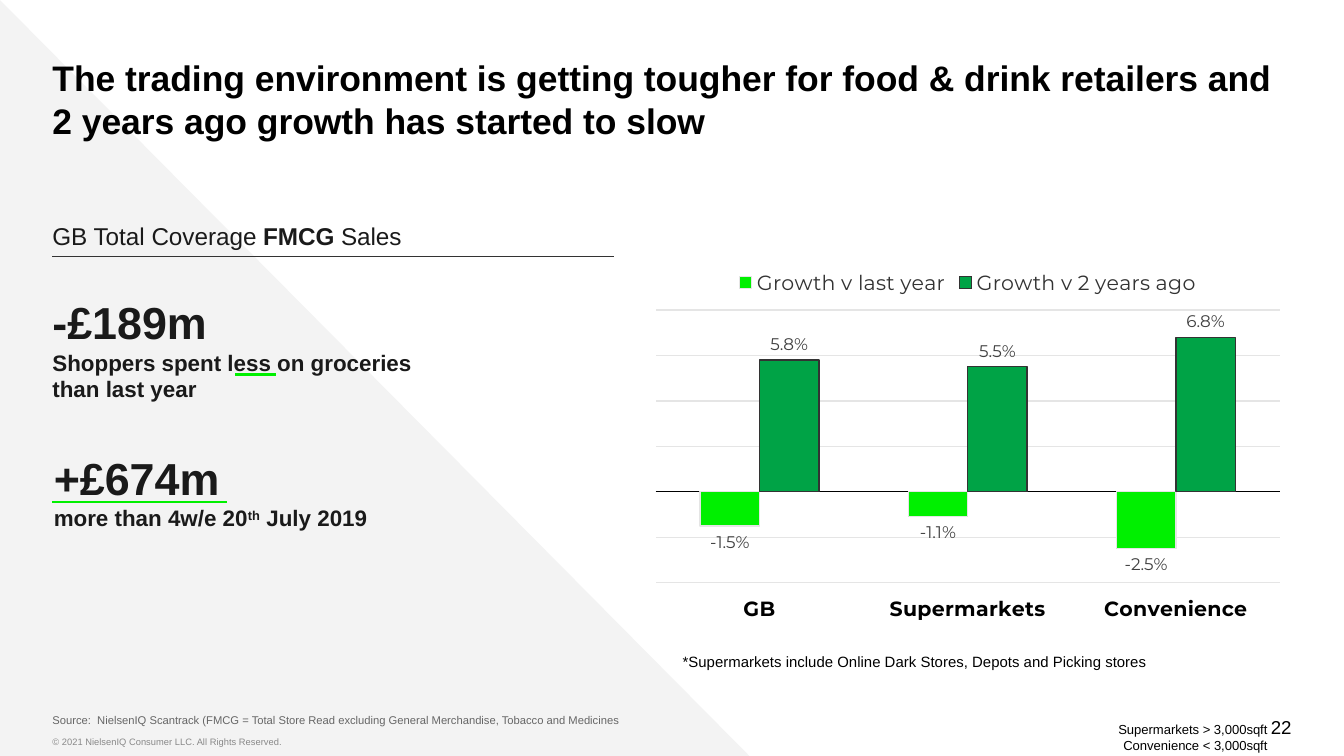
import pptx
import pptx.chart.data
import pptx.dml.color
import pptx.enum.chart
import pptx.enum.shapes
import pptx.enum.text
import pptx.oxml
import pptx.oxml.ns
import pptx.util

Pt = pptx.util.Pt
RGB = pptx.dml.color.RGBColor
ALIGN = pptx.enum.text.PP_ALIGN
ANCHOR = pptx.enum.text.MSO_ANCHOR

BLACK = RGB(0x00, 0x00, 0x00)
INK = RGB(0x1A, 0x1A, 0x1A)
CHARCOAL = RGB(0x33, 0x33, 0x33)
LABEL_GREY = RGB(0x40, 0x40, 0x40)
SOURCE_GREY = RGB(0x66, 0x66, 0x66)
COPYRIGHT_GREY = RGB(0x88, 0x88, 0x88)
GRID_GREY = RGB(0xE5, 0xE5, 0xE5)
PALE_GREY = RGB(0xF3, 0xF3, 0xF3)
LIME = RGB(0x00, 0xF0, 0x00)
GREEN = RGB(0x00, 0xA3, 0x46)


def style_font(font, size, color, bold=False, name="Arial"):
    font.name, font.size, font.bold = name, Pt(size), bold
    font.color.rgb = color


def write(shape, at, insets, paragraphs, color, align=ALIGN.LEFT, anchor=ANCHOR.TOP):
    """Place a shape and fill it; a run is (text, size, bold), None is a line break."""
    shape.left, shape.top, shape.width, shape.height = map(Pt, at)
    frame = shape.text_frame
    frame.word_wrap = True
    frame.auto_size = pptx.enum.text.MSO_AUTO_SIZE.NONE
    frame.vertical_anchor = anchor
    frame.margin_left, frame.margin_top, frame.margin_right, frame.margin_bottom = map(Pt, insets)
    for index, runs in enumerate(paragraphs):
        paragraph = frame.add_paragraph() if index else frame.paragraphs[0]
        paragraph.alignment = align
        paragraph.space_before = Pt(0)
        for piece in runs:
            if piece is None:
                paragraph.add_line_break()
                continue
            run = paragraph.add_run()
            run.text = piece[0]
            style_font(run.font, piece[1], color, piece[2])
    return frame


deck = pptx.Presentation()
deck.slide_width, deck.slide_height = Pt(720), Pt(405)
slide = deck.slides.add_slide(deck.slide_layouts[0])
shapes = slide.shapes

# Background triangle, behind the placeholders
triangle = shapes.add_shape(
    pptx.enum.shapes.MSO_SHAPE.RIGHT_TRIANGLE, 0, 0, Pt(402.5), Pt(406))
triangle.shadow.inherit = False
triangle.fill.solid()
triangle.fill.fore_color.rgb = PALE_GREY
triangle.line.fill.background()
shapes.element.insert(2, triangle.element)

# Title and source
write(shapes.title, (28.1, 23, 663.8, 31), (0, 7.2, 0, 7.2),
      [[("The trading environment is getting tougher for food & drink retailers and "
         "2 years ago growth has started to slow", 19, True)]], BLACK)
write(slide.placeholders[1], (28.1, 382.3, 642.2, 14.4), (0, 7.2, 0, 7.2),
      [[("Source:  NielsenIQ Scantrack (FMCG = Total Store Read excluding General "
         "Merchandise, Tobacco and Medicines", 6, False)]],
      SOURCE_GREY, anchor=ANCHOR.BOTTOM)

# Headline figures, notes and footer
FLUSH = (0, 3.6, 0, 3.6)
PADDED = (7.2, 3.6, 7.2, 3.6)
copyright_line, page_number, heading, decline, increase, coverage_note, size_note = (
    shapes.add_textbox(0, 0, 0, 0) for _ in range(7))
write(copyright_line, (28.1, 391, 398.9, 14.4), FLUSH,
      [[("© 2021 NielsenIQ Consumer LLC. All Rights Reserved.", 5, False)]], COPYRIGHT_GREY)
write(page_number, (529.9, 378.7, 162, 21.6), FLUSH,
      [[("22", 10, False)]], BLACK, ALIGN.RIGHT, ANCHOR.MIDDLE)
write(heading, (28.1, 115.2, 299.5, 23.8), FLUSH,
      [[("GB Total Coverage ", 13, False), ("FMCG", 13, True), (" Sales", 13, False)]], INK)
write(decline, (28.1, 163.4, 218.2, 46.8), (0, 0, 0, 0),
      [[("-£189m", 24, True), None,
        ("Shoppers spent less on groceries than last year", 12, True)]],
      INK, anchor=ANCHOR.MIDDLE)
growth = write(increase, (28.8, 247.7, 208.1, 46.8), (0, 0, 0, 16),
               [[("+£674m", 24, True), None, ("more than 4w/e 20", 12, True),
                 ("th", 12, True), (" July 2019", 12, True)]],
               INK, anchor=ANCHOR.MIDDLE)
ordinal = growth.paragraphs[0].runs[2]
ordinal.font._element.set("baseline", "30000")
write(coverage_note, (358.6, 346.3, 283, 26.6), PADDED,
      [[("*Supermarkets include Online Dark Stores, Depots and Picking stores", 8, False)]], BLACK)
write(size_note, (472.3, 383, 213.8, 24.5), PADDED,
      [[("Supermarkets > 3,000sqft", 7, False)],
       [("Convenience < 3,000sqft", 7, False)]], BLACK, ALIGN.RIGHT)

# Heading rule and green underlines, each just below its text
for left, right, y, color, weight in (
    (28.1, 329, 137.5, CHARCOAL, 0.75),
    (28.1, 121.7, 269, LIME, 1.5),
    (126, 147.6, 200.5, LIME, 1.5),
):
    rule = shapes.add_connector(
        pptx.enum.shapes.MSO_CONNECTOR.STRAIGHT, Pt(left), Pt(y), Pt(right), Pt(y))
    rule.line.color.rgb = color
    rule.line.width = Pt(weight)
    rule.element.spPr.append(pptx.oxml.parse_xml(
        f"<a:effectLst {pptx.oxml.ns.nsdecls('a')}/>"))

# Growth chart
growth_data = pptx.chart.data.CategoryChartData(number_format="0.0%")
growth_data.categories = ["GB", "Supermarkets", "Convenience"]
growth_data.add_series("Growth v last year", (-0.015, -0.011, -0.025))
growth_data.add_series("Growth v 2 years ago", (0.058, 0.055, 0.068))
chart = shapes.add_chart(
    pptx.enum.chart.XL_CHART_TYPE.COLUMN_CLUSTERED,
    Pt(344.2), Pt(136.1), Pt(348.5), Pt(200.2), growth_data).chart
style_font(chart.font, 10, BLACK)
chart.has_title = False
chart.has_legend = True
chart.legend.position = pptx.enum.chart.XL_LEGEND_POSITION.TOP
chart.legend.include_in_layout = False
style_font(chart.legend.font, 11, CHARCOAL, name="Montserrat")

categories = chart.category_axis
categories.tick_label_position = pptx.enum.chart.XL_TICK_LABEL_POSITION.LOW
categories.major_tick_mark = pptx.enum.chart.XL_TICK_MARK.NONE
categories.format.line.color.rgb = BLACK
categories.format.line.width = Pt(0.75)
style_font(categories.tick_labels.font, 11, BLACK, True, "Montserrat")

values = chart.value_axis
values.minimum_scale, values.maximum_scale, values.major_unit = -0.04, 0.08, 0.02
values.visible = False
values.has_major_gridlines = True
values.major_gridlines.format.line.color.rgb = GRID_GREY
values.major_gridlines.format.line.width = Pt(0.75)

plot = chart.plots[0]
plot.gap_width, plot.overlap, plot.vary_by_categories = 150, 0, False
for series, fill, outline in zip(plot.series, (LIME, GREEN), (GRID_GREY, CHARCOAL)):
    series.invert_if_negative = False
    series.format.fill.solid()
    series.format.fill.fore_color.rgb = fill
    series.format.line.color.rgb = outline
    series.format.line.width = Pt(0.75)
    labels = series.data_labels
    labels.show_value = True
    labels.number_format, labels.number_format_is_linked = "0.0%", False
    labels.position = pptx.enum.chart.XL_LABEL_POSITION.OUTSIDE_END
    style_font(labels.font, 9, LABEL_GREY, name="Montserrat")

# Fixed inner plot area
plot_area = chart.element.chart.plotArea
for old_layout in plot_area.findall(pptx.oxml.ns.qn("c:layout")):
    plot_area.remove(old_layout)
plot_area.insert(0, pptx.oxml.parse_xml(
    f"<c:layout {pptx.oxml.ns.nsdecls('c')}><c:manualLayout>"
    '<c:layoutTarget val="inner"/><c:xMode val="edge"/><c:yMode val="edge"/>'
    '<c:x val="0.02"/><c:y val="0.15"/><c:w val="0.96"/><c:h val="0.73"/>'
    "</c:manualLayout></c:layout>"))

deck.save("out.pptx")
